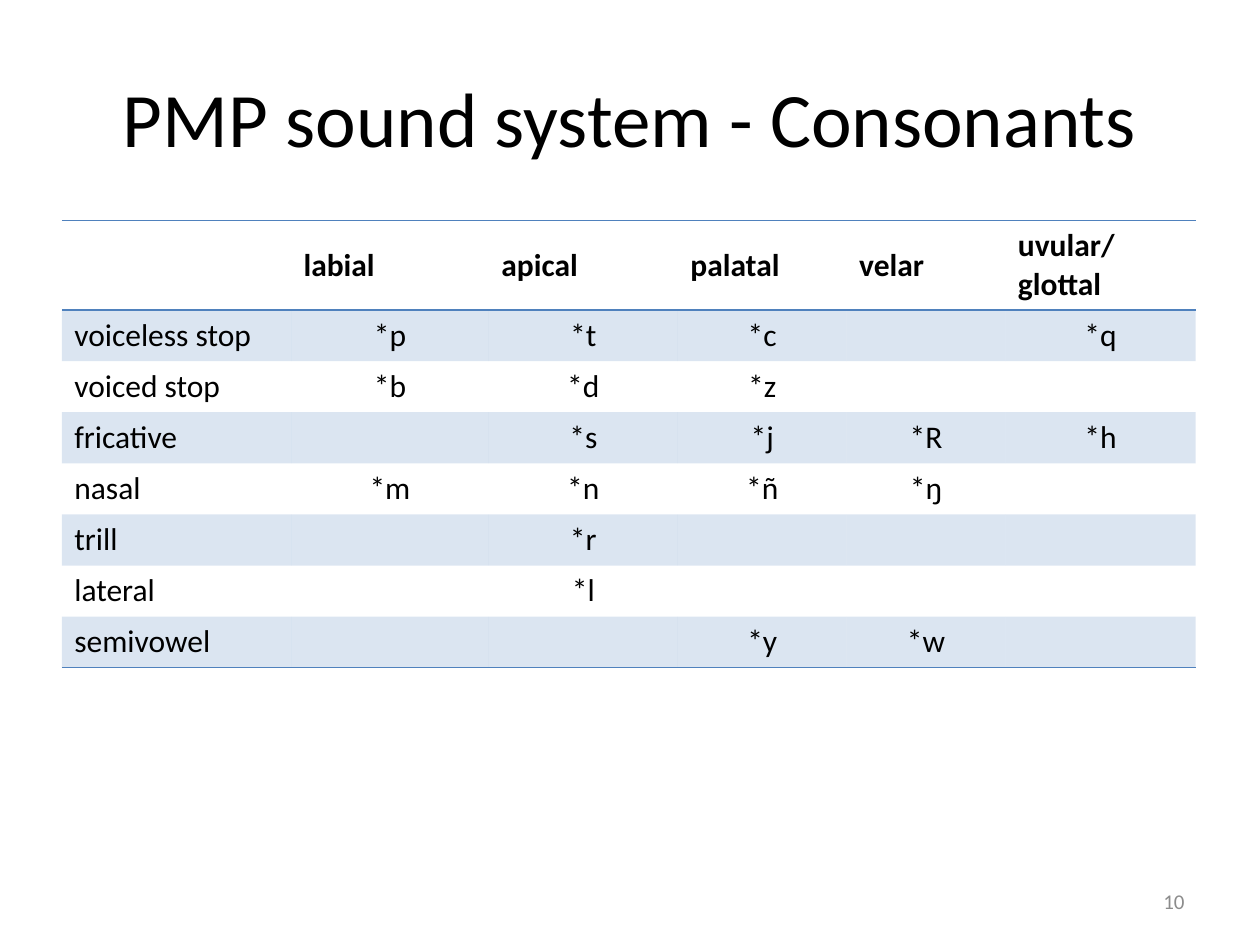
"""Build a slide with a table of the PMP consonant system."""
from lxml import etree
from pptx import Presentation
from pptx.dml.color import RGBColor
from pptx.enum.text import MSO_ANCHOR, PP_ALIGN
from pptx.oxml import parse_xml
from pptx.oxml.ns import nsdecls, qn
from pptx.util import Inches, Pt

MIDDLE, TOP = MSO_ANCHOR.MIDDLE, MSO_ANCHOR.TOP
LEFT, CENTER, RIGHT = PP_ALIGN.LEFT, PP_ALIGN.CENTER, PP_ALIGN.RIGHT
COLORS = {"text": "000000", "accent": "4F81BD", "number": "8C8C8C"}
PLAIN_TABLE_STYLE = "{2D5ABB26-0587-4C30-8999-92F81FD0307C}"
TITLE_ONLY = 5
COLUMN_WIDTHS = [1.82, 1.57, 1.5, 1.34, 1.26, 1.51]
ROW_HEIGHT = Pt(29.2)
ROWS = [
    ["", "labial", "apical", "palatal", "velar", "uvular/\nglottal"],
    ["voiceless stop", "*p", "*t", "*c", "", "*q"],
    ["voiced stop", "*b", "*d", "*z", "", ""],
    ["fricative", "", "*s", "*j", "*R", "*h"],
    ["nasal", "*m", "*n", "*ñ", "*ŋ", ""],
    ["trill", "", "*r", "", "", ""],
    ["lateral", "", "*l", "", "", ""],
    ["semivowel", "", "", "*y", "*w", ""],
]


def write_text(frame, text, alignment, color="text", **font_values):
    frame.text = text
    for paragraph in frame.paragraphs:
        paragraph.alignment = alignment
        for run in paragraph.runs:
            for name, value in {"name": "Calibri", **font_values}.items():
                setattr(run.font, name, value)
            run.font.color.rgb = RGBColor.from_string(COLORS[color])


def add_borders(cell, sides):
    properties = cell._tc.get_or_add_tcPr()
    for index, side in enumerate(sides):
        properties.insert(index, parse_xml(
            f'<a:ln{side} {nsdecls("a")} w="12700"><a:solidFill>'
            f'<a:srgbClr val="{COLORS["accent"]}"/></a:solidFill></a:ln{side}>'))


presentation = Presentation()
presentation.slide_width, presentation.slide_height = Inches(10), Inches(7.5)
width, height = presentation.slide_width, presentation.slide_height
slide = presentation.slides.add_slide(presentation.slide_layouts[TITLE_ONLY])

title = slide.shapes.title
title_place = {"left": 0.05 * width, "top": 0.04 * height,
               "width": 0.9 * width, "height": Inches(1.25)}
for name, value in title_place.items():
    setattr(title, name, int(value))
title.text_frame.vertical_anchor = MIDDLE
write_text(title.text_frame, "PMP sound system - Consonants", CENTER, size=Pt(44))

table = slide.shapes.add_table(
    len(ROWS), len(COLUMN_WIDTHS), Inches(0.49), Inches(1.75),
    Inches(sum(COLUMN_WIDTHS)), ROW_HEIGHT * len(ROWS)).table
table._tbl.tblPr.find(qn("a:tableStyleId")).text = PLAIN_TABLE_STYLE
for column, column_width in zip(table.columns, COLUMN_WIDTHS):
    column.width = Inches(column_width)

for row_index, labels in enumerate(ROWS):
    is_header = row_index == 0
    is_last = row_index == len(ROWS) - 1
    table.rows[row_index].height = ROW_HEIGHT
    for column_index, label in enumerate(labels):
        cell = table.cell(row_index, column_index)
        cell.vertical_anchor = MIDDLE if is_header else TOP
        alignment = LEFT if is_header or column_index == 0 else CENTER
        write_text(cell.text_frame, label, alignment, size=Pt(18), bold=is_header)
        if row_index % 2:
            cell.fill.solid()
            cell.fill.fore_color.rgb = RGBColor.from_string(COLORS["accent"])
            fill_color = cell._tc.tcPr.find(".//" + qn("a:srgbClr"))
            etree.SubElement(fill_color, qn("a:alpha"), val="20000")
        else:
            cell.fill.background()
        add_borders(cell, "TB" if is_header else "B" if is_last else "")

number_box = slide.shapes.add_textbox(
    Inches(7.17), Inches(6.95), Inches(2.33), Inches(0.4))
number_box.text_frame.word_wrap = True
number_box.text_frame.vertical_anchor = MIDDLE
write_text(number_box.text_frame, "10", RIGHT, "number", size=Pt(12))

presentation.save("out.pptx")
